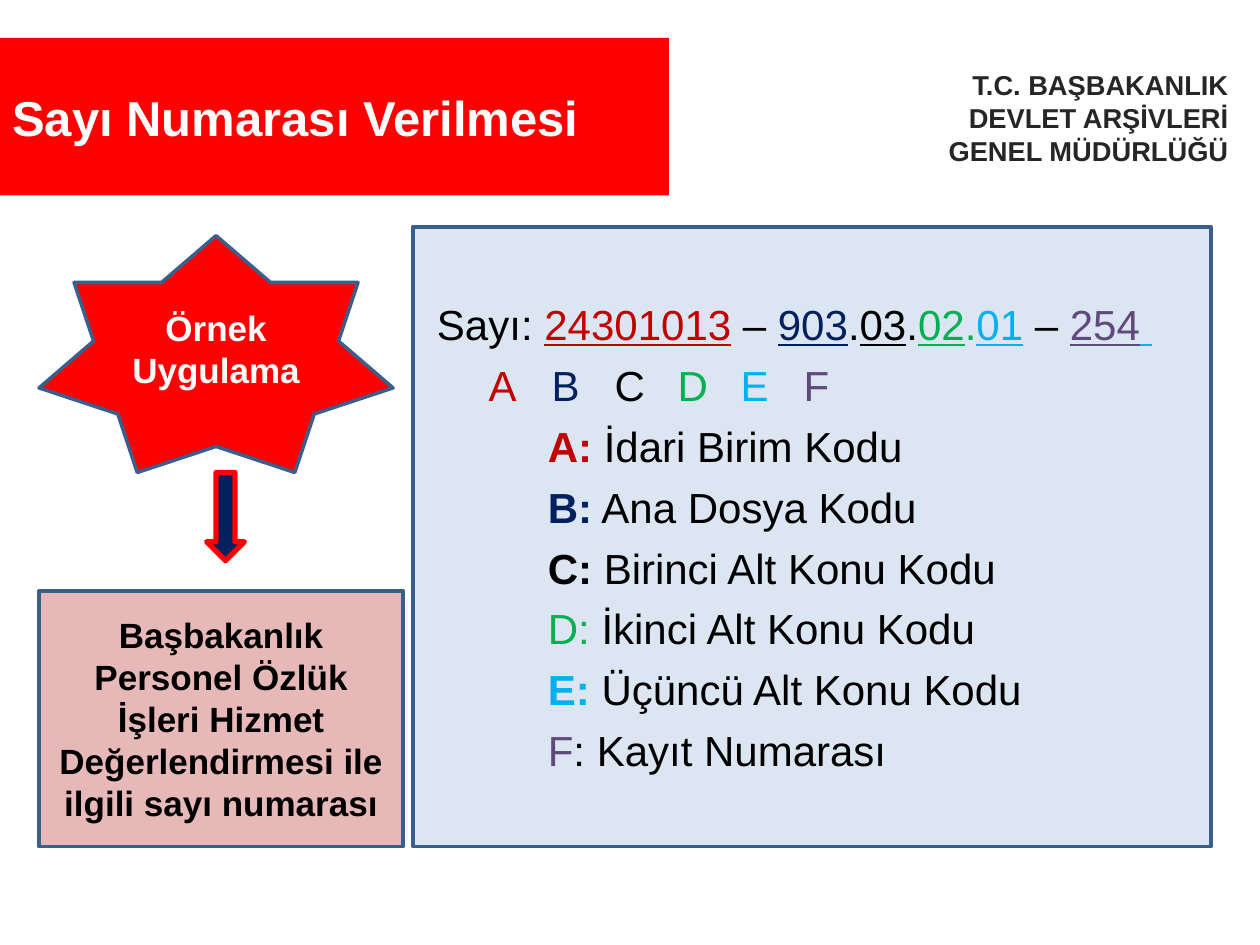
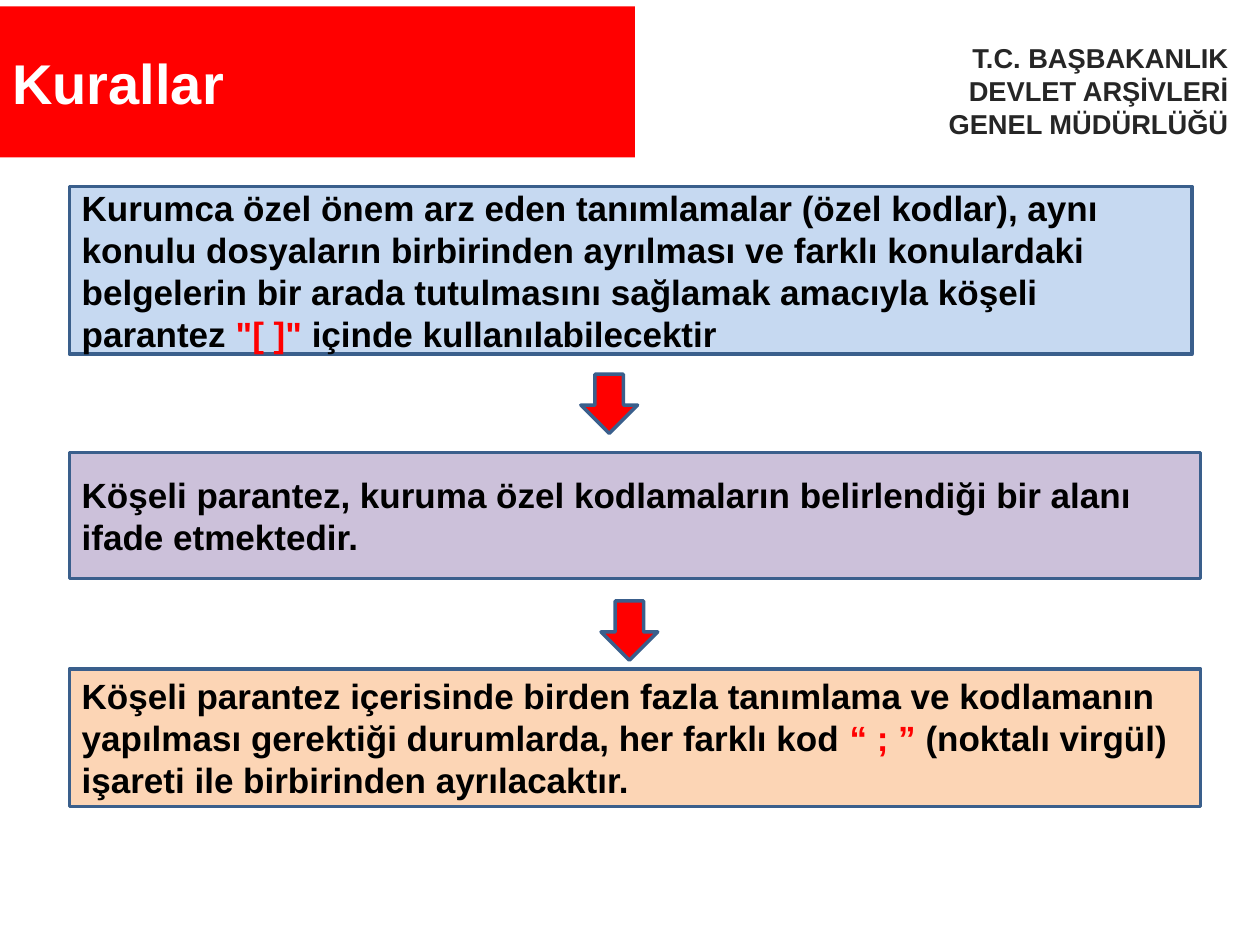
from dataclasses import dataclass
from lxml.etree import SubElement
from pptx import Presentation
from pptx.dml.color import RGBColor
from pptx.enum.shapes import MSO_SHAPE
from pptx.enum.text import MSO_ANCHOR, PP_ALIGN
from pptx.oxml.ns import qn
from pptx.util import Inches, Pt


@dataclass(frozen=True)
class Theme:
    font: str = "Arial"
    white: str = "FFFFFF"
    black: str = "000000"
    red: str = "FF0000"
    outline: str = "3A5F8C"
    charcoal: str = "262626"
    crimson: str = "C00000"
    navy: str = "002060"
    green: str = "00B050"
    sky: str = "00B0F0"
    purple: str = "604A7B"
    pale_blue: str = "DCE6F2"
    soft_blue: str = "C6D9F1"
    rose: str = "E6B9B8"
    lilac: str = "CCC1DA"
    peach: str = "FCD5B5"
    code_size: float = 24
    body_size: float = 20
    agency_size: float = 15.6


THEME = Theme()
AGENCY = ["T.C. BAŞBAKANLIK", "DEVLET ARŞİVLERİ", "GENEL MÜDÜRLÜĞÜ"]


def add_block(page, kind, box, fill, line=THEME.outline, width=2):
    block = page.shapes.add_shape(kind, *[Inches(value) for value in box])
    block.shadow.inherit = False
    block.fill.solid()
    block.fill.fore_color.rgb = RGBColor.from_string(fill)
    if line:
        block.line.color.rgb = RGBColor.from_string(line)
        block.line.width = Pt(width)
    else:
        block.line.fill.background()
    block.text_frame.word_wrap = True
    block.text_frame.vertical_anchor = MSO_ANCHOR.MIDDLE
    return block


def set_paragraph(para, align, margin=0, tabs=()):
    para.alignment = align
    properties = para._p.get_or_add_pPr()
    properties.set("marL", str(Inches(margin)))
    properties.set("indent", "0")
    if tabs:
        tab_list = SubElement(properties, qn("a:tabLst"))
        for position, kind in tabs:
            SubElement(tab_list, qn("a:tab"), pos=str(Inches(position)), algn=kind)


def set_font(font, size, color, bold=False):
    font.name = THEME.font
    font.size = Pt(size)
    font.bold = bold
    font.color.rgb = RGBColor.from_string(color)


def write_lines(block, lines, size, color, align=PP_ALIGN.LEFT):
    frame = block.text_frame
    for index, line in enumerate(lines):
        para = frame.add_paragraph() if index else frame.paragraphs[0]
        set_paragraph(para, align)
        para.text = line
        set_font(para.font, size, color, True)


def add_span(para, text, size, color, bold=False, underline=False):
    span = para.add_run()
    span.text = text
    set_font(span.font, size, color, bold)
    span.font.underline = underline


def add_header(page, title, size, title_box, agency_box):
    band = add_block(page, MSO_SHAPE.RECTANGLE, title_box, THEME.red, None)
    write_lines(band, [title], size, THEME.white)
    agency = add_block(page, MSO_SHAPE.RECTANGLE, agency_box, THEME.white, THEME.white, 0.75)
    write_lines(agency, AGENCY, THEME.agency_size, THEME.charcoal, PP_ALIGN.RIGHT)


def add_example(page, left, top):
    star = add_block(page, MSO_SHAPE.STAR_7_POINT, (left, top, 2.81, 1.88), THEME.red)
    write_lines(star, ["Örnek Uygulama"], THEME.body_size, THEME.white, PP_ALIGN.CENTER)
    subject = add_block(page, MSO_SHAPE.RECTANGLE, (left, top + 2.82, 2.89, 2.03), THEME.rose)
    write_lines(
        subject,
        ["Başbakanlık Personel Özlük İşleri Hizmet Değerlendirmesi ile ilgili sayı numarası"],
        THEME.body_size, THEME.black, PP_ALIGN.CENTER,
    )
    add_block(page, MSO_SHAPE.DOWN_ARROW, (left + 1.33, top + 1.88, 0.3, 0.7),
              THEME.navy, THEME.red, 3)


def add_number_panel(page, box):
    panel = add_block(page, MSO_SHAPE.RECTANGLE, box, THEME.pale_blue)
    number = panel.text_frame.paragraphs[0]
    set_paragraph(number, PP_ALIGN.JUSTIFY, 0.09, [(5.99, "l")])
    number_parts = [
        ("Sayı: ", THEME.black, False), ("24301013", THEME.crimson, True),
        (" – ", THEME.black, False), ("903", THEME.navy, True),
        (".", THEME.black, False), ("03", THEME.black, True),
        (".", THEME.black, False), ("02", THEME.green, True),
        (".", THEME.green, False), ("01", THEME.sky, True),
        (" – ", THEME.black, False), ("254", THEME.purple, True),
        (" ", THEME.sky, True), ("\t", THEME.green, True),
    ]
    for text, color, underline in number_parts:
        add_span(number, text, THEME.code_size, color, underline=underline)

    legend = [
        ("A", ":", "İdari Birim Kodu", THEME.crimson, True, 1.61),
        ("B", ":", "Ana Dosya Kodu", THEME.navy, True, 3.0),
        ("C", ":", "Birinci Alt Konu Kodu", THEME.black, True, 3.6),
        ("D", ":", "İkinci Alt Konu Kodu", THEME.green, False, 4.12),
        ("E", ":", "Üçüncü Alt Konu Kodu", THEME.sky, True, 4.54),
        ("F", "", ": Kayıt Numarası", THEME.purple, False, 5.31),
    ]
    letters = panel.text_frame.add_paragraph()
    set_paragraph(letters, PP_ALIGN.JUSTIFY, 0, [(entry[-1], "ctr") for entry in legend])
    letters.space_before = Pt(6)
    for letter, _, _, color, _, _ in legend:
        add_span(letters, "\t" + letter, THEME.code_size, color)
    for letter, colon, meaning, color, bold, _ in legend:
        para = panel.text_frame.add_paragraph()
        set_paragraph(para, PP_ALIGN.JUSTIFY, 0.97)
        para.space_before = Pt(6)
        add_span(para, letter + colon, THEME.code_size, color, bold)
        add_span(para, " " + meaning if colon else meaning, THEME.code_size, THEME.black)


def add_rule(page, kind, box, fill, parts):
    rule = add_block(page, kind, box, fill)
    para = rule.text_frame.paragraphs[0]
    set_paragraph(para, PP_ALIGN.LEFT)
    for text, color in parts:
        add_span(para, text, THEME.body_size, color, True)


def build_numbering(page):
    add_header(page, "Sayı Numarası Verilmesi", 28, (0, 0.3, 5.31, 1.25), (6.02, 0.31, 3.83, 1.25))
    add_number_panel(page, (3.28, 1.8, 6.33, 4.92))
    add_example(page, 0.31, 1.87)


def build_rules(page):
    add_header(page, "Kurallar", 32, (0, 0.05, 5.04, 1.2), (6.02, 0.05, 3.83, 1.34))
    rules = [
        (MSO_SHAPE.FLOWCHART_PROCESS, 1.48, 8.91, 1.33, THEME.soft_blue, [
            ("Kurumca özel önem arz eden tanımlamalar (özel kodlar), aynı konulu dosyaların "
             "birbirinden ayrılması ve farklı konulardaki belgelerin bir arada tutulmasını "
             "sağlamak amacıyla köşeli parantez ", THEME.black),
            ('"[ ]" ', THEME.red),
            ("içinde kullanılabilecektir", THEME.black),
        ]),
        (MSO_SHAPE.RECTANGLE, 3.59, 8.98, 1, THEME.lilac, [
            ("Köşeli parantez, kuruma özel kodlamaların belirlendiği bir alanı ifade etmektedir.",
             THEME.black),
        ]),
        (MSO_SHAPE.RECTANGLE, 5.31, 8.98, 1.09, THEME.peach, [
            ("Köşeli parantez içerisinde birden fazla tanımlama ve kodlamanın yapılması "
             "gerektiği durumlarda, her farklı kod ", THEME.black),
            ("“ ; ”", THEME.red),
            (" (noktalı virgül) işareti ile birbirinden ayrılacaktır.", THEME.black),
        ]),
    ]
    for kind, top, width, height, fill, parts in rules:
        add_rule(page, kind, (0.55, top, width, height), fill, parts)
    for left, top in [(4.61, 2.97), (4.77, 4.77)]:
        add_block(page, MSO_SHAPE.DOWN_ARROW, (left, top, 0.45, 0.47), THEME.red)


def main():
    deck = Presentation()
    deck.slide_width, deck.slide_height = Inches(10), Inches(7.5)
    for build in (build_numbering, build_rules):
        build(deck.slides.add_slide(deck.slide_layouts[6]))
    deck.save("out.pptx")


if __name__ == "__main__":
    main()
